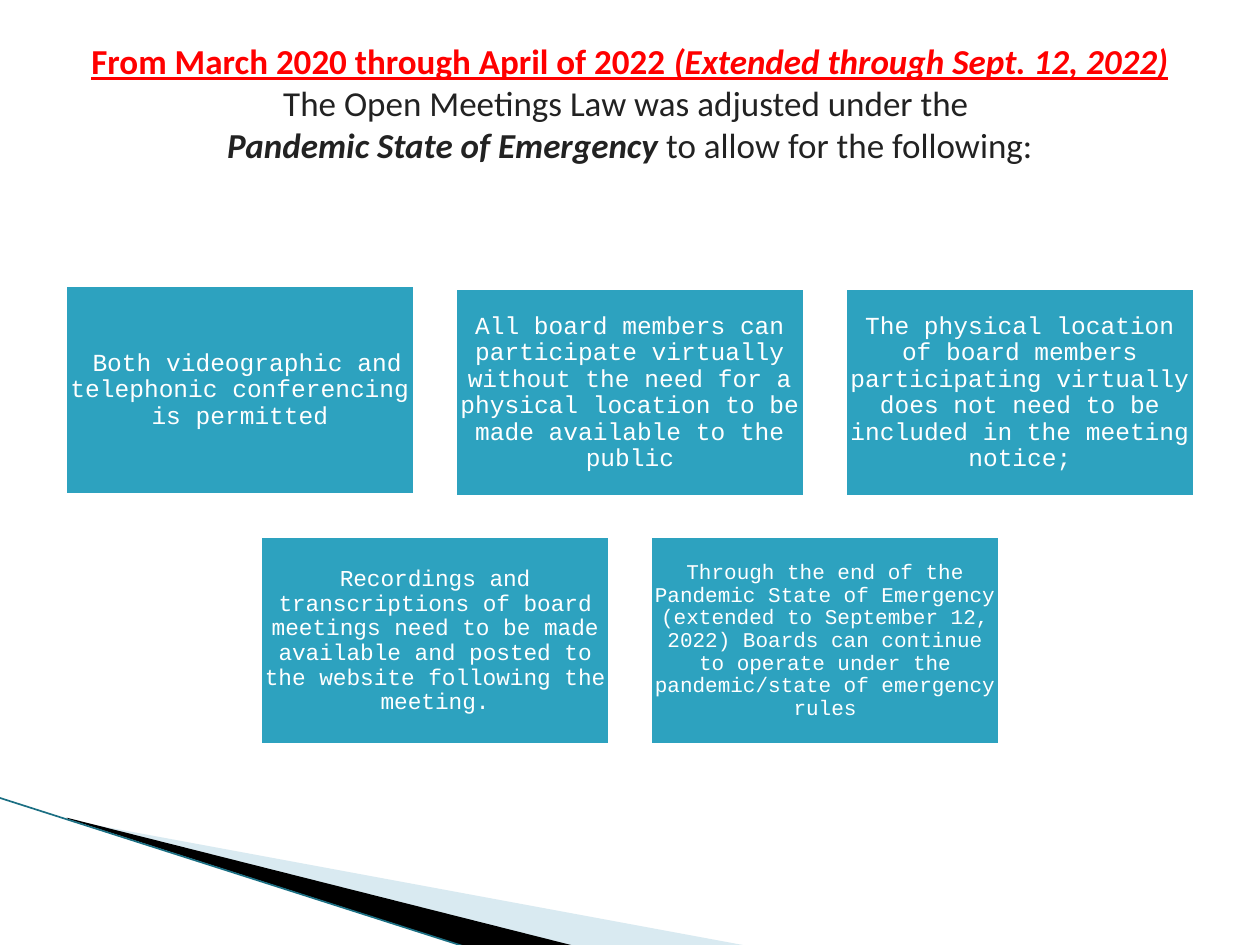
from dataclasses import dataclass

from lxml.etree import SubElement
from pptx import Presentation
from pptx.dml.color import RGBColor
from pptx.enum.shapes import MSO_CONNECTOR, MSO_SHAPE
from pptx.enum.text import MSO_ANCHOR, PP_ALIGN
from pptx.oxml.ns import qn
from pptx.util import Inches, Pt


@dataclass(frozen=True)
class Theme:
    box: str = "2DA2BF"
    white: str = "FFFFFF"
    red: str = "FF0000"
    ink: str = "222222"
    pale: str = "A0CBDC"
    black: str = "000000"
    edge: str = "1B6F83"
    title_font: str = "Calibri"
    box_font: str = "Courier New"
    title_size: int = 20


theme = Theme()


def add_text(p, text, *, size, font, color, bold=False, italic=False, underline=False):
    r = p.add_run()
    r.text = text
    r.font.size = Pt(size)
    r.font.name = font
    r.font.color.rgb = RGBColor.from_string(color)
    r.font.bold = bold
    r.font.italic = italic
    r.font.underline = underline


def set_frame(tf, inset_x, inset_y):
    tf.word_wrap = True
    tf.vertical_anchor = MSO_ANCHOR.MIDDLE
    tf.margin_left = tf.margin_right = Inches(inset_x)
    tf.margin_top = tf.margin_bottom = Inches(inset_y)
    p = tf.paragraphs[0]
    p.alignment = PP_ALIGN.CENTER
    return p


prs = Presentation()
prs.slide_width, prs.slide_height = Inches(10), Inches(7.5)
s = prs.slides.add_slide(prs.slide_layouts[6])

# Corner wedges
wedges = [
    ([(0.55, 6.51), (5.95, 7.51), (4.56, 7.51), (0.55, 6.5)], theme.pale, 40),
    ([(0.53, 6.49), (4.57, 7.51), (3.72, 7.52), (0.54, 6.5)], theme.black, 100),
]
for points, color, opacity in wedges:
    start, *rest = [(Inches(x), Inches(y)) for x, y in points]
    builder = s.shapes.build_freeform(*start)
    builder.add_line_segments(rest, close=True)
    sp = builder.convert_to_shape()
    sp.shadow.inherit = False
    sp.fill.solid()
    sp.fill.fore_color.rgb = RGBColor.from_string(color)
    sp.line.fill.background()
    if opacity < 100:
        clr = sp.fill._xPr.find(qn("a:solidFill"))[0]
        SubElement(clr, qn("a:alpha")).set("val", str(opacity * 1000))

# Corner edge line
edge = s.shapes.add_connector(
    MSO_CONNECTOR.STRAIGHT, Inches(-0.01), Inches(6.33), Inches(3.71), Inches(7.52))
edge.line.color.rgb = RGBColor.from_string(theme.edge)
edge.line.width = Pt(0.95)
SubElement(edge._element.spPr, qn("a:effectLst"))

# Boxes: three above, two centred below
box_w, box_h, left = 2.81, 1.69, 0.5
pitch = (9 - box_w) / 2
boxes = [
    (0, 2.25, 14, " Both videographic and telephonic conferencing is permitted"),
    (1, 2.27, 14, "All board members can participate virtually without the need for a "
                  "physical location to be made available to the public"),
    (2, 2.27, 14, "The physical location of board members participating virtually does "
                  "not need to be included in the meeting notice;"),
    (0.5, 4.24, 13, "Recordings and transcriptions of board meetings need to be made "
                    "available and posted to the website following the meeting."),
    (1.5, 4.24, 12, "Through the end of the Pandemic State of Emergency (extended to "
                    "September 12, 2022) Boards can continue to operate under the "
                    "pandemic/state of emergency rules"),
]
for column, top, size, text in boxes:
    sp = s.shapes.add_shape(MSO_SHAPE.RECTANGLE, Inches(left + column * pitch),
                            Inches(top), Inches(box_w), Inches(box_h))
    sp.shadow.inherit = False
    sp.fill.solid()
    sp.fill.fore_color.rgb = RGBColor.from_string(theme.box)
    sp.line.color.rgb = RGBColor.from_string(theme.white)
    sp.line.width = Pt(4.33)
    p = set_frame(sp.text_frame, 0.04, 0.05)
    p.line_spacing = 0.9
    add_text(p, text, size=size, font=theme.box_font, color=theme.white)

# Title
title = s.shapes.add_textbox(Inches(0.5), Inches(0.3), Inches(9), Inches(1.03))
p = set_frame(title.text_frame, 0.1, 0.05)
p.space_after = Pt(8)
title_lines = [
    [("From March 2020 through April of 2022 ",
      dict(color=theme.red, bold=True, underline=True)),
     ("(Extended through Sept. 12, 2022)",
      dict(color=theme.red, bold=True, italic=True, underline=True))],
    [("The Open Meetings Law was adjusted under the ", dict(color=theme.ink))],
    [("Pandemic State of Emergency", dict(color=theme.ink, bold=True, italic=True)),
     (" to allow for the following:", dict(color=theme.ink))],
]
for i, line in enumerate(title_lines):
    if i:
        p.add_line_break()
    for text, style in line:
        add_text(p, text, size=theme.title_size, font=theme.title_font, **style)

prs.save("out.pptx")
